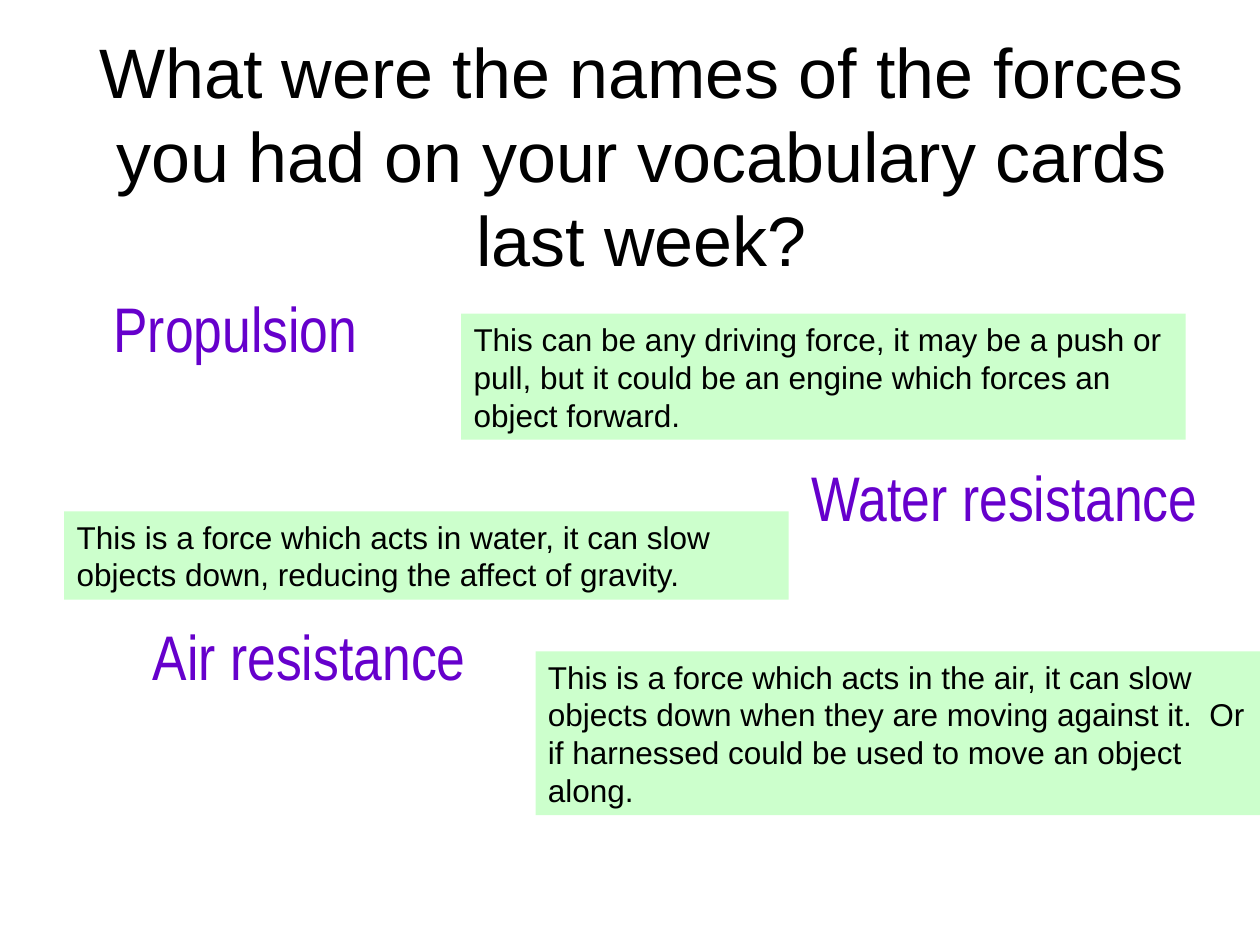
import pptx
import pptx.dml.color
import pptx.enum.shapes
import pptx.enum.text
import pptx.oxml
import pptx.oxml.ns
import pptx.util

COLORS = {
    "text": "000000",
    "card": "CCFFCC",
    "word_top": "6600CC",
    "word_bottom": "CC00CC",
    "word_edge": "CC99FF",
}
QUESTION = "What were the names of the forces you had on your vocabulary cards last week?"

# Each force: name, name box, meaning, meaning box (left, top, width, height in grid units)
FORCES = [
    ("Propulsion", (0.75, 2.25, 2.24, 1.41),
     "This can be any driving force, it may be a push or pull, "
     "but it could be an engine which forces an object forward.",
     (3.66, 2.49, 5.75, 1)),
    ("Water resistance", (6.5, 3.59, 2.95, 1.41),
     "This is a force which acts in water, it can slow objects down, "
     "reducing the affect of gravity.",
     (0.51, 4.06, 5.75, 0.7)),
    ("Air resistance", (0.98, 4.85, 2.95, 1.41),
     "This is a force which acts in the air, it can slow objects down when they are "
     "moving against it.  Or if harnessed could be used to move an object along.",
     (4.25, 5.17, 5.75, 1.3)),
]


def rgb(name):
    return pptx.dml.color.RGBColor.from_string(COLORS[name])


class VocabularySlide:
    """Holds the slide and its style on a grid of 10 columns by 7.5 rows."""

    columns, rows = 10, 7.5
    body_font, word_font = "Arial", "Arial Narrow"

    def __init__(self, deck):
        self.unit_x = deck.slide_width / self.columns
        self.unit_y = deck.slide_height / self.rows
        self.slide = deck.slides.add_slide(deck.slide_layouts[5])

    def box(self, left, top, width, height):
        return (round(left * self.unit_x), round(top * self.unit_y),
                round(width * self.unit_x), round(height * self.unit_y))

    def set_text(self, shape, text, size, font_name, align, anchor, wrap=True):
        frame = shape.text_frame
        frame.text = text
        frame.word_wrap = wrap
        frame.auto_size = pptx.enum.text.MSO_AUTO_SIZE.NONE
        frame.vertical_anchor = anchor
        paragraph = frame.paragraphs[0]
        paragraph.alignment = align
        run = paragraph.runs[0]
        run.font.size = pptx.util.Pt(size)
        run.font.name = font_name
        run.font.color.rgb = rgb("text")
        return run

    def title(self, text, area):
        heading = self.slide.shapes.title
        heading.left, heading.top, heading.width, heading.height = self.box(*area)
        self.set_text(heading, text, 40, self.body_font, pptx.enum.text.PP_ALIGN.CENTER,
                      pptx.enum.text.MSO_ANCHOR.MIDDLE)

    def force_name(self, text, area):
        label = self.slide.shapes.add_textbox(*self.box(*area))
        run = self.set_text(label, text, 36, self.word_font, pptx.enum.text.PP_ALIGN.CENTER,
                            pptx.enum.text.MSO_ANCHOR.TOP, wrap=False)
        fill = run.font.fill
        fill.gradient()
        fill.gradient_angle = 270
        for stop, name in zip(fill.gradient_stops, ("word_top", "word_bottom")):
            stop.color.rgb = rgb(name)
        self.outline(run)

    def outline(self, run):
        edge = pptx.oxml.parse_xml(
            f'<a:ln {pptx.oxml.ns.nsdecls("a")} w="{pptx.util.Pt(0.75)}"><a:solidFill>'
            f'<a:srgbClr val="{COLORS["word_edge"]}"/></a:solidFill></a:ln>')
        # The outline must precede the fill in the run properties
        run._r.get_or_add_rPr().insert(0, edge)

    def meaning(self, text, area):
        card = self.slide.shapes.add_shape(
            pptx.enum.shapes.MSO_SHAPE.RECTANGLE, *self.box(*area))
        card.shadow.inherit = False
        card.fill.solid()
        card.fill.fore_color.rgb = rgb("card")
        card.line.fill.background()
        self.set_text(card, text, 18, self.body_font, pptx.enum.text.PP_ALIGN.LEFT,
                      pptx.enum.text.MSO_ANCHOR.TOP)


def main():
    deck = pptx.Presentation()
    deck.slide_width = pptx.util.Inches(10)
    deck.slide_height = pptx.util.Inches(7.5)
    vocabulary = VocabularySlide(deck)
    vocabulary.title(QUESTION, (0.59, 0.6, 9, 1.25))
    for name, name_area, definition, definition_area in FORCES:
        vocabulary.force_name(name, name_area)
        vocabulary.meaning(definition, definition_area)
    deck.save("out.pptx")


if __name__ == "__main__":
    main()
